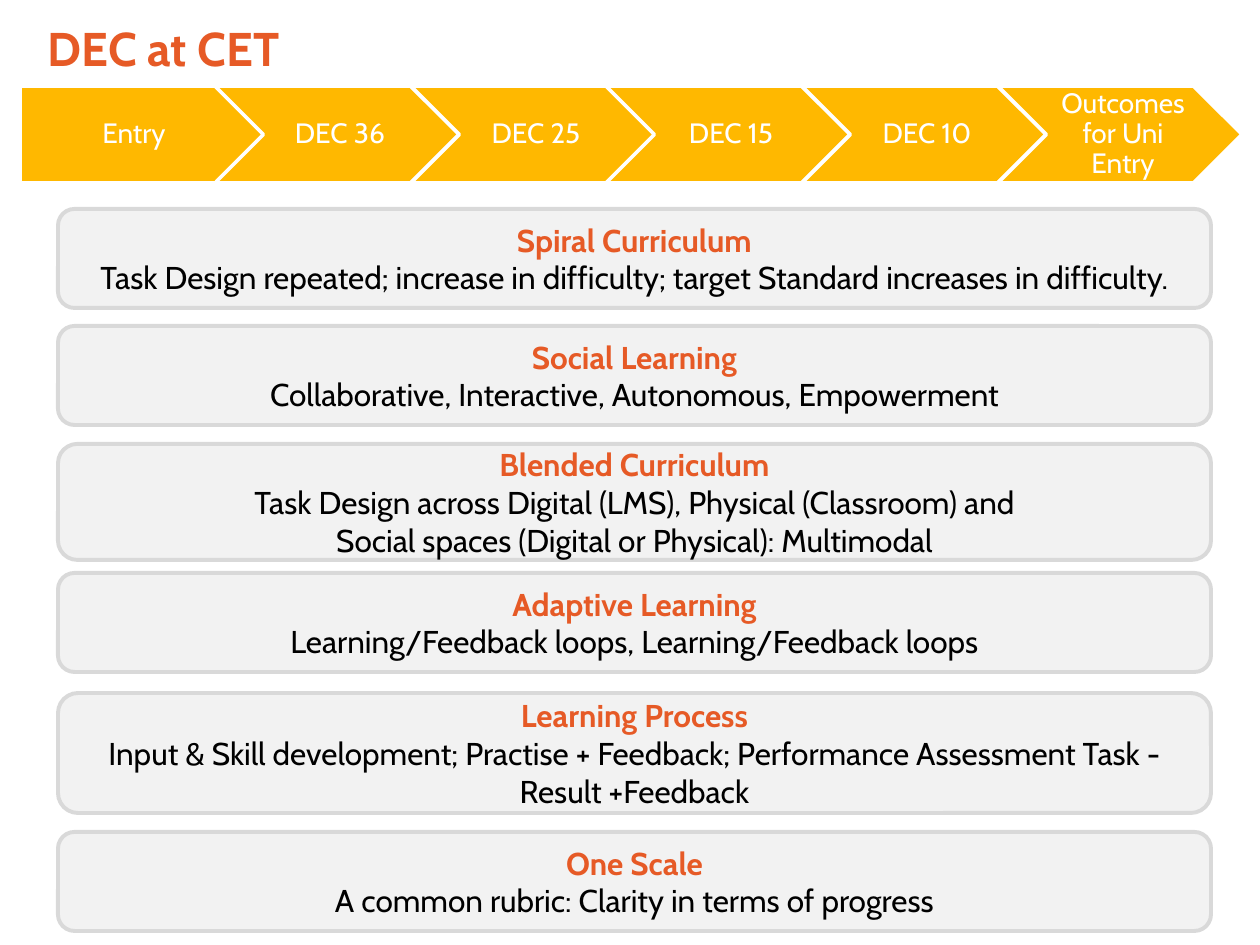
"""Build the DEC at CET slide: a chevron process above six principle cards."""
from dataclasses import dataclass
from pptx import Presentation
from pptx.dml.color import RGBColor
from pptx.enum.shapes import MSO_SHAPE
from pptx.enum.text import MSO_ANCHOR, MSO_AUTO_SIZE, PP_ALIGN
from pptx.util import Pt


@dataclass(frozen=True)
class Theme:
    font: str = "Cabin"
    accent: str = "E65A26"
    step: str = "FFB800"
    card: str = "F2F2F2"
    edge: str = "D9D9D9"
    white: str = "FFFFFF"
    black: str = "000000"
    head: int = 27
    body: int = 18
    label: int = 16


def px(num):
    return round(num * 914400 / 126)


def write(para, text, size, color, bold=False, align=PP_ALIGN.CENTER, space=1.0):
    para.text = text
    para.alignment = align
    para.line_spacing = space
    font = para.font
    font.name, font.size, font.bold = theme.font, Pt(size), bold
    font.color.rgb = RGBColor.from_string(color)


theme = Theme()
deck = Presentation()
deck.slide_width, deck.slide_height = px(1260), px(945)
slide = deck.slides.add_slide(deck.slide_layouts[5])

title = slide.shapes.title
title.left, title.top, title.width, title.height = px(35), px(-1), px(1086), px(97)
frame = title.text_frame
frame.auto_size = MSO_AUTO_SIZE.NONE
frame.vertical_anchor = MSO_ANCHOR.MIDDLE
write(frame.paragraphs[0], "DEC at CET", theme.head, theme.accent,
      bold=True, align=PP_ALIGN.LEFT)

steps = ["Entry", "DEC 36", "DEC 25", "DEC 15", "DEC 10", "Outcomes for Uni Entry"]
cards = [
    (209, 99, ["Spiral Curriculum",
               "Task Design repeated; increase in difficulty; "
               "target Standard increases in difficulty."]),
    (326, 99, ["Social Learning",
               "Collaborative, Interactive, Autonomous, Empowerment"]),
    (444, 116, ["Blended Curriculum",
                "Task Design across Digital (LMS), Physical (Classroom) and",
                "Social spaces (Digital or Physical): Multimodal"]),
    (573, 99, ["Adaptive Learning",
               "Learning/Feedback loops, Learning/Feedback loops"]),
    (693, 120, ["Learning Process",
                "Input & Skill development; Practise + Feedback; "
                "Performance Assessment Task - Result +Feedback"]),
    (832, 99, ["One Scale", "A common rubric: Clarity in terms of progress"]),
]

for num, name in enumerate(steps):
    kind = MSO_SHAPE.CHEVRON if num else MSO_SHAPE.PENTAGON
    left = 20 + num * 978 // 5
    step = slide.shapes.add_shape(kind, px(left), px(86), px(244), px(97))
    step.shadow.inherit = False
    step.fill.solid()
    step.fill.fore_color.rgb = RGBColor.from_string(theme.step)
    step.line.color.rgb = RGBColor.from_string(theme.white)
    step.line.width = Pt(2)
    frame = step.text_frame
    frame.word_wrap = True
    frame.vertical_anchor = MSO_ANCHOR.MIDDLE
    frame.margin_left, frame.margin_right = px(9 if num else 11), px(3)
    frame.margin_top = frame.margin_bottom = px(6)
    write(frame.paragraphs[0], name, theme.label, theme.white, space=0.9)

for top, high, lines in cards:
    card = slide.shapes.add_shape(MSO_SHAPE.ROUNDED_RECTANGLE,
                                  px(58), px(top), px(1153), px(high))
    card.shadow.inherit = False
    card.fill.solid()
    card.fill.fore_color.rgb = RGBColor.from_string(theme.card)
    card.line.color.rgb = RGBColor.from_string(theme.edge)
    card.line.width = Pt(2.25)
    frame = card.text_frame
    frame.word_wrap = True
    frame.vertical_anchor = MSO_ANCHOR.MIDDLE
    write(frame.paragraphs[0], lines[0], theme.body, theme.accent, bold=True)
    for line in lines[1:]:
        write(frame.add_paragraph(), line, theme.body, theme.black)

deck.save("out.pptx")
